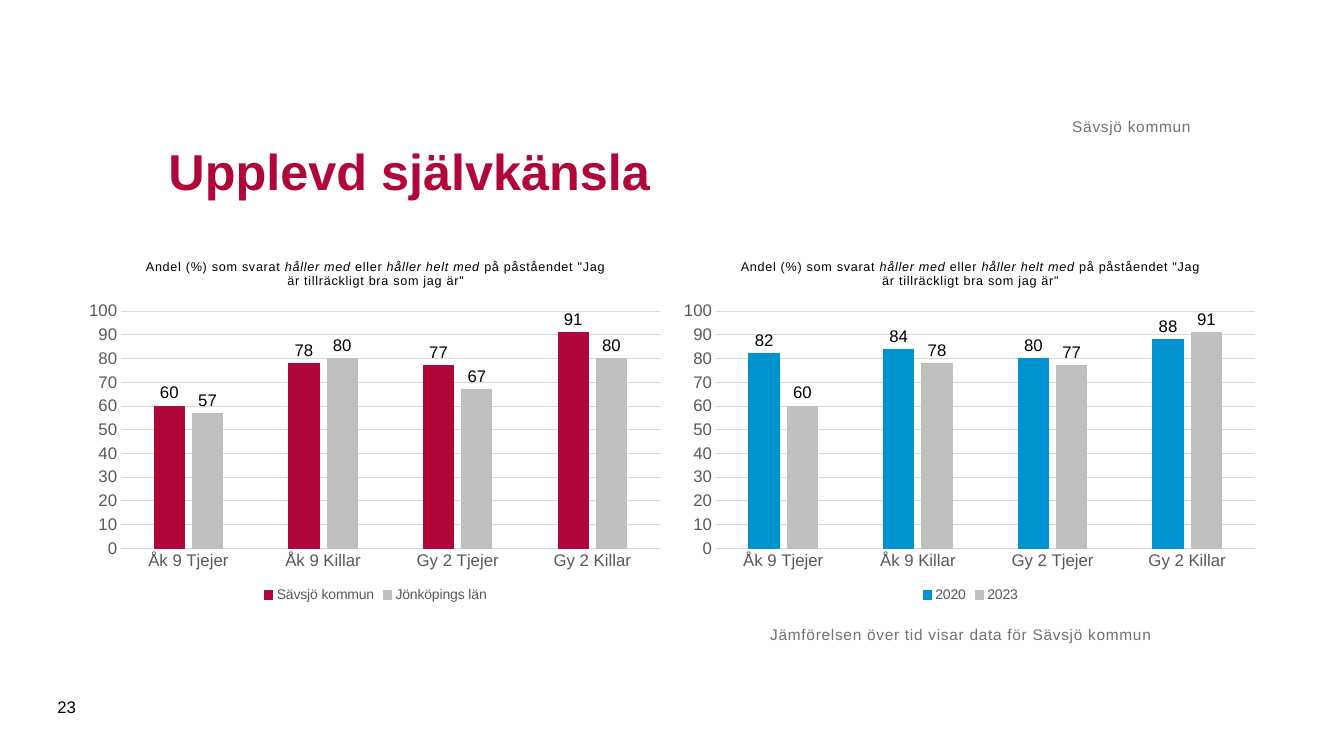
from lxml import etree
from pptx import Presentation
from pptx.chart.data import CategoryChartData
from pptx.dml.color import RGBColor
from pptx.enum.chart import (
    XL_CHART_TYPE as CT,
    XL_LABEL_POSITION as LP,
    XL_LEGEND_POSITION as LG,
    XL_TICK_MARK as TM,
)
from pptx.enum.text import MSO_ANCHOR as MA, PP_ALIGN as PA
from pptx.oxml.ns import qn
from pptx.util import Inches, Pt

W, H = Inches(13.33), Inches(7.5)
RED = RGBColor(0xB1, 0x06, 0x3A)
BLUE = RGBColor(0x00, 0x93, 0xD0)
SILVER = RGBColor(0xBF, 0xBF, 0xBF)
GRID = RGBColor(0xD9, 0xD9, 0xD9)
AXIS = RGBColor(0x59, 0x59, 0x59)
MUTED = RGBColor(0x71, 0x71, 0x71)
BLACK = RGBColor(0, 0, 0)

CATEGORIES = ["Åk 9 Tjejer", "Åk 9 Killar", "Gy 2 Tjejer", "Gy 2 Killar"]
MUNICIPALITY_2023 = (60, 78, 77, 91)
CHARTS = [
    [("Sävsjö kommun", MUNICIPALITY_2023, RED),
     ("Jönköpings län", (57, 80, 67, 80), SILVER)],
    [("2020", (82, 84, 80, 88), BLUE),
     ("2023", MUNICIPALITY_2023, SILVER)],
]
QUESTION = [
    ("Andel (%) som svarat ", False),
    ("håller med", True),
    (" eller ", False),
    ("håller helt med", True),
    (' på påståendet "Jag är tillräckligt bra som jag är"', False),
]
NUMBER_FORMAT = "#,##0;#,##0"
PLOT_AREA = {"x": 0.07, "y": 0.19, "w": 0.91, "h": 0.65}
FLUSH = dict.fromkeys(
    ("margin_left", "margin_top", "margin_right", "margin_bottom"), 0)


def box(left, top, width, height):
    return [int(W * left / 100), int(H * top / 100),
            int(W * width / 100), int(H * height / 100)]


def apply(target, values):
    for name, value in values.items():
        setattr(target, name, value)


def style_font(font, size, color, **extra):
    apply(font, {"name": "Arial", "size": Pt(size), **extra})
    font.color.rgb = color


def add_run(p, text, size, color, spacing=0, **extra):
    r = p.add_run()
    r.text = text
    style_font(r.font, size, color, **extra)
    if spacing:
        r._r.get_or_add_rPr().set("spc", str(spacing))


def add_title(s, text, area):
    sp = s.shapes.title
    apply(sp, dict(zip(("left", "top", "width", "height"), area)))
    tf = sp.text_frame
    apply(tf, {"word_wrap": True, "vertical_anchor": MA.MIDDLE})
    p = tf.paragraphs[0]
    p.alignment = PA.LEFT
    add_run(p, text, 36, RED, bold=True)


def add_text(s, text, area, size, color, spacing=0, align=PA.LEFT, **frame):
    tf = s.shapes.add_textbox(*area).text_frame
    apply(tf, {"word_wrap": True, **frame})
    p = tf.paragraphs[0]
    p.alignment = align
    add_run(p, text, size, color, spacing)


def place_plot(chart):
    plot_area = chart._chartSpace.find(".//" + qn("c:plotArea"))
    for old in plot_area.findall(qn("c:layout")):
        plot_area.remove(old)
    layout = etree.Element(qn("c:layout"))
    manual = etree.SubElement(layout, qn("c:manualLayout"))
    settings = {"layoutTarget": "inner", "xMode": "edge", "yMode": "edge",
                **PLOT_AREA}
    for tag, value in settings.items():
        etree.SubElement(manual, qn("c:" + tag)).set("val", str(value))
    plot_area.insert(0, layout)


def style_axes(chart):
    category, value = chart.category_axis, chart.value_axis
    for axis in (category, value):
        apply(axis, {"major_tick_mark": TM.NONE, "minor_tick_mark": TM.NONE})
        style_font(axis.tick_labels.font, 12, AXIS)
    apply(value, {"minimum_scale": 0, "maximum_scale": 100, "major_unit": 10,
                  "has_major_gridlines": True})
    apply(value.tick_labels, {"number_format": NUMBER_FORMAT,
                              "number_format_is_linked": False})
    value.format.line.fill.background()
    for line in (category.format.line, value.major_gridlines.format.line):
        line.color.rgb = GRID
        line.width = Pt(0.75)


def style_series(series, color):
    series.format.fill.solid()
    series.format.fill.fore_color.rgb = color
    series.format.line.color.rgb = color
    series.format.line.width = Pt(0.75)
    labels = series.data_labels
    apply(labels, {"show_value": True, "position": LP.OUTSIDE_END,
                   "number_format": NUMBER_FORMAT,
                   "number_format_is_linked": False})
    style_font(labels.font, 12, BLACK)


def add_column_chart(s, groups, area):
    data = CategoryChartData()
    data.categories = CATEGORIES
    for name, values, _ in groups:
        data.add_series(name, values)
    chart = s.shapes.add_chart(CT.COLUMN_CLUSTERED, *area, data).chart
    style_font(chart.font, 10, BLACK)
    apply(chart, {"has_title": True, "has_legend": True})
    p = chart.chart_title.text_frame.paragraphs[0]
    for text, italic in QUESTION:
        add_run(p, text, 9, BLACK, 50, bold=False, italic=italic)
    apply(chart.legend, {"position": LG.BOTTOM, "include_in_layout": False})
    style_font(chart.legend.font, 10, AXIS)
    plot = chart.plots[0]
    apply(plot, {"gap_width": 219, "overlap": -27,
                 "vary_by_categories": False})
    for series, (_, _, color) in zip(plot.series, groups):
        style_series(series, color)
    style_axes(chart)
    place_plot(chart)


def main():
    prs = Presentation()
    apply(prs, {"slide_width": W, "slide_height": H})
    s = prs.slides.add_slide(prs.slide_layouts[5])
    for i, groups in enumerate(CHARTS):
        add_column_chart(s, groups, box(5.93 + i * 44.26, 32, 44.04, 48.27))
    add_title(s, "Upplevd självkänsla", box(11.78, 13.07, 76.82, 18.93))
    add_text(s, "Sävsjö kommun", box(11.78, 8.27, 76.82, 9.73), 11, MUTED, 50,
             PA.RIGHT, vertical_anchor=MA.BOTTOM, **FLUSH)
    add_text(s, "23", box(3.53, 90.8, 4.28, 5.33), 12, BLACK,
             vertical_anchor=MA.MIDDLE)
    add_text(s, "Jämförelsen över tid visar data för Sävsjö kommun",
             box(57.31, 82.67, 39.83, 12.53), 11, MUTED, 50, **FLUSH)
    prs.save("out.pptx")


if __name__ == "__main__":
    main()
